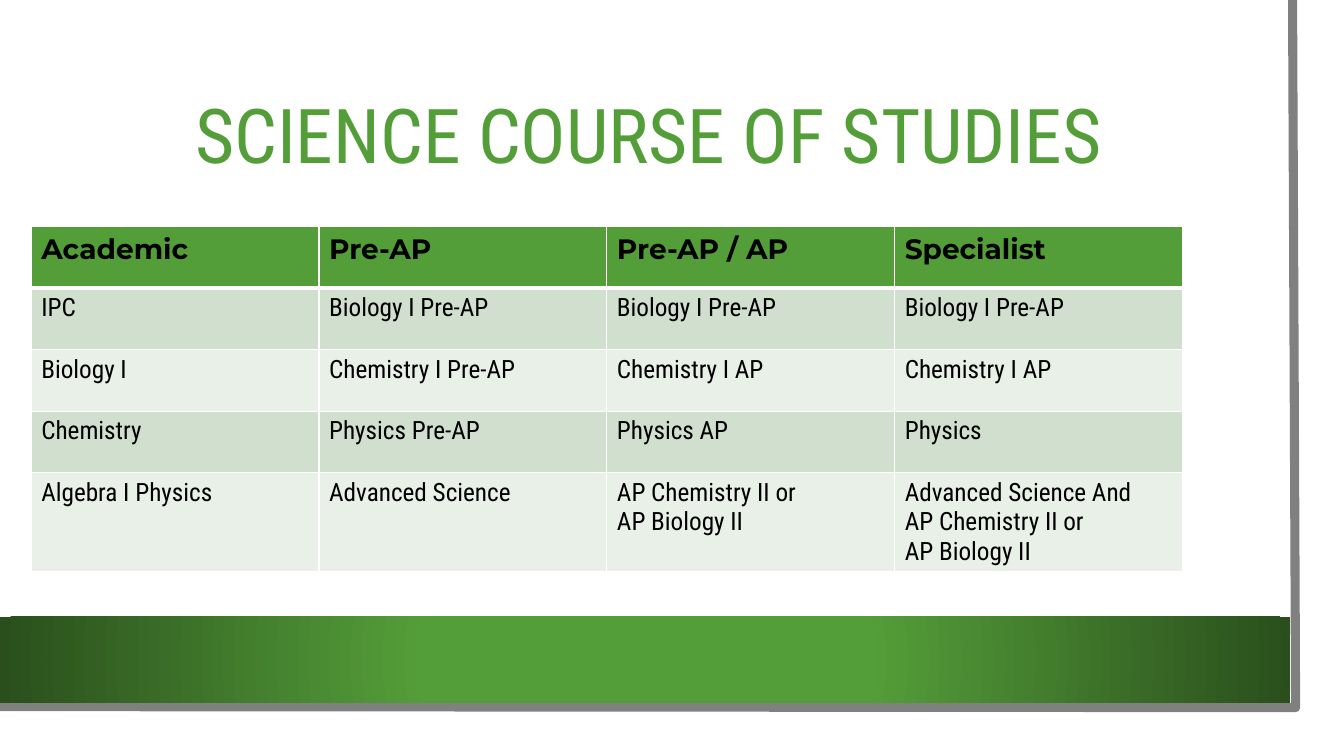
from dataclasses import dataclass
from lxml import etree
from pptx import Presentation
from pptx.dml.color import RGBColor as Color
from pptx.enum.shapes import MSO_SHAPE as Shape
from pptx.enum.text import MSO_ANCHOR as Anchor, PP_ALIGN as Align
from pptx.oxml import parse_xml
from pptx.util import Inches, Pt


@dataclass(frozen=True)
class Theme:
    green: str = "549E39"
    dark_green: str = "2A4F1C"
    light_band: str = "E9F0E8"
    dark_band: str = "D1DFCE"
    white: str = "FFFFFF"
    black: str = "000000"
    grey: str = "808080"
    body_font: str = "Roboto Condensed"
    header_font: str = "Montserrat"
    title_size: int = 54
    header_size: int = 20
    body_size: int = 18


theme = Theme()
namespace = "http://schemas.openxmlformats.org/drawingml/2006/main"


def write(frame, text, *, size, color=theme.black, font=theme.body_font,
          bold=False, align=Align.LEFT, spacing=None):
    frame.text = text
    for para in frame.paragraphs:
        para.alignment = align
        para.line_spacing = spacing
        for span in para.runs:
            span.font.name = font
            span.font.size = Pt(size)
            span.font.bold = bold
            span.font.color.rgb = Color.from_string(color)


def add_border(cell, position, side, width):
    line = parse_xml(
        f'<a:{side} xmlns:a="{namespace}" w="{Pt(width)}"><a:solidFill>'
        f'<a:srgbClr val="{theme.white}"/></a:solidFill></a:{side}>')
    cell._tc.get_or_add_tcPr().insert(position, line)


deck = Presentation()
deck.slide_width = Inches(13.33)
deck.slide_height = Inches(7.5)
page = deck.slides.add_slide(deck.slide_layouts[5])

paper = page.shapes.add_shape(Shape.RECTANGLE, 0, 0, Inches(13.1), Inches(7.27))
paper.shadow.inherit = False
paper.fill.solid()
paper.fill.fore_color.rgb = Color.from_string(theme.white)
paper.line.fill.background()

builder = page.shapes.build_freeform(Inches(12.82), 0)
builder.add_line_segments(
    [(Inches(12.85), Inches(7.02)), (Inches(-0.03), Inches(7.01))], close=False)
edge = builder.convert_to_shape()
edge.shadow.inherit = False
edge.fill.background()
edge.line.color.rgb = Color.from_string(theme.grey)
edge.line.width = Pt(6.5)

band = page.shapes.add_shape(
    Shape.RECTANGLE, 0, Inches(6.12), Inches(12.8), Inches(0.85))
band.shadow.inherit = False
band.line.fill.background()
band.fill.gradient()
gradient = band._element.spPr.find(f"{{{namespace}}}gradFill")
for child in list(gradient):
    gradient.remove(child)
stops = etree.SubElement(gradient, f"{{{namespace}}}gsLst")
for position, color in [(34, theme.green), (100, theme.dark_green)]:
    stop = etree.SubElement(stops, f"{{{namespace}}}gs", pos=str(position * 1000))
    etree.SubElement(stop, f"{{{namespace}}}srgbClr", val=color)
radial = etree.SubElement(gradient, f"{{{namespace}}}path", path="circle")
etree.SubElement(radial, f"{{{namespace}}}fillToRect",
                 l="50000", t="50000", r="50000", b="50000")

title = page.shapes.title
title.left, title.top = Inches(0.75), Inches(0.75)
title.width, title.height = Inches(11.37), Inches(1.26)
title.text_frame.vertical_anchor = Anchor.MIDDLE
title.text_frame.word_wrap = True
write(title.text_frame, "SCIENCE COURSE OF STUDIES", size=theme.title_size,
      color=theme.green, align=Align.CENTER, spacing=0.9)
page.shapes._spTree.append(title._element)

courses = [
    ["Academic", "Pre-AP", "Pre-AP / AP", "Specialist"],
    ["IPC", "Biology I Pre-AP", "Biology I Pre-AP", "Biology I Pre-AP"],
    ["Biology I", "Chemistry I Pre-AP", "Chemistry I AP", "Chemistry I AP"],
    ["Chemistry", "Physics Pre-AP", "Physics AP", "Physics"],
    ["Algebra I Physics", "Advanced Science", "AP Chemistry II or\nAP Biology II",
     "Advanced Science And\vAP Chemistry II or\nAP Biology II"],
]
row_heights = [0.61] * 4 + [0.98]
table = page.shapes.add_table(
    len(courses), len(courses[0]), Inches(0.31), Inches(2.25),
    Inches(11.42), Inches(sum(row_heights))).table

for row_index, row in enumerate(courses):
    table.rows[row_index].height = Inches(row_heights[row_index])
    header = row_index == 0
    fill = theme.green if header else (
        theme.dark_band if row_index % 2 else theme.light_band)
    for column_index, text in enumerate(row):
        cell = table.cell(row_index, column_index)
        cell.fill.solid()
        cell.fill.fore_color.rgb = Color.from_string(fill)
        write(cell.text_frame, text, bold=header,
              size=theme.header_size if header else theme.body_size,
              font=theme.header_font if header else theme.body_font)
        top = 3 if row_index == 1 else 1
        bottom = 3 if header else 1
        for position, (side, width) in enumerate(
                [("lnL", 1), ("lnR", 1), ("lnT", top), ("lnB", bottom)]):
            add_border(cell, position, side, width)

deck.save("out.pptx")
